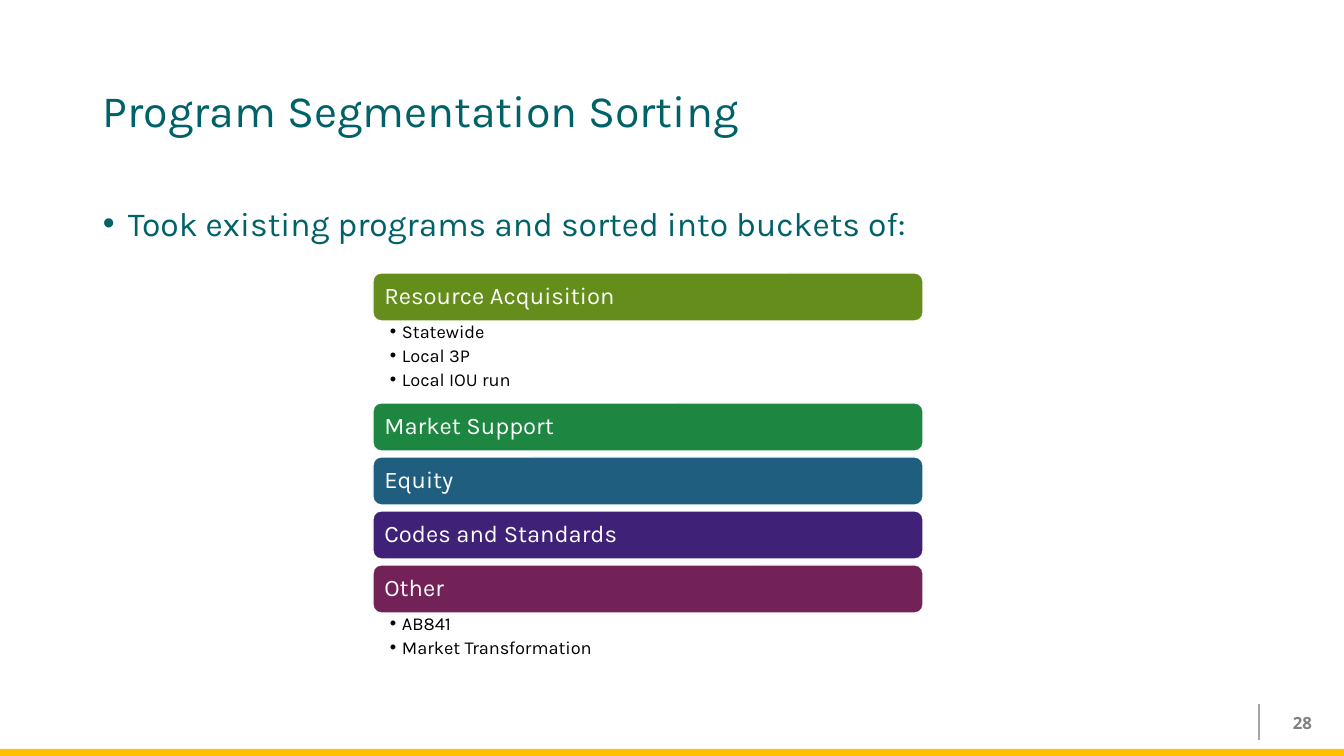
from dataclasses import dataclass

from lxml import etree
from pptx import Presentation
from pptx import util as u
from pptx.dml.color import RGBColor
from pptx.enum import shapes, text
from pptx.oxml.ns import qn

EMU_PER_PX = 914400 / 100.8
TEAL, WHITE, BLACK = "006269", "FFFFFF", "000000"


@dataclass(frozen=True)
class Style:
    size: int
    color: str
    font: str = "Karla"
    bold: bool = False
    align: text.PP_ALIGN = text.PP_ALIGN.LEFT
    anchor: text.MSO_ANCHOR = text.MSO_ANCHOR.TOP
    insets: tuple[int, int, int, int] = (10, 5, 10, 5)
    spacing: float = 0.9
    before: int = 0
    after: int = 0
    indent: int = 0  # hanging bullet indent; 0 means no bullet


@dataclass(frozen=True)
class Bucket:
    name: str
    color: str
    items: tuple[str, ...] = ()
    items_h: int = 0


TITLE = Style(32, TEAL, anchor=text.MSO_ANCHOR.MIDDLE)
BODY = Style(24, TEAL, before=10, indent=25)
NUMBER = Style(12, "808080", "Open Sans", True, text.PP_ALIGN.RIGHT,
               text.MSO_ANCHOR.MIDDLE, spacing=1.0)
BAR = Style(17, WHITE, anchor=text.MSO_ANCHOR.MIDDLE, insets=(9, 9, 9, 9))
ITEM = Style(13, BLACK, insets=(17, 2, 13, 2), after=3, indent=12)

BUCKETS = (
    Bucket("Resource Acquisition", "658D1B",
           ("Statewide", "Local 3P", "Local IOU run"), 82),
    Bucket("Market Support", "1D8641"),
    Bucket("Equity", "1F5E7F"),
    Bucket("Codes and Standards", "3F2178"),
    Bucket("Other", "722257", ("AB841", "Market Transformation"), 53),
)
BAR_X, BAR_Y, BAR_W, BAR_H, BAR_GAP = 373, 273, 550, 48, 6


def px(n: int) -> u.Emu:
    return u.Emu(round(n * EMU_PER_PX))


def rgb(color: str) -> RGBColor:
    return RGBColor.from_string(color)


def write(sp, lines: tuple[str, ...], st: Style) -> None:
    tf = sp.text_frame
    tf.word_wrap = True
    tf.vertical_anchor = st.anchor
    (tf.margin_left, tf.margin_top,
     tf.margin_right, tf.margin_bottom) = map(px, st.insets)
    for i, line in enumerate(lines):
        p = tf.add_paragraph() if i else tf.paragraphs[0]
        p.alignment = st.align
        p.line_spacing = st.spacing
        p.space_before, p.space_after = u.Pt(st.before), u.Pt(st.after)
        if st.indent:
            pPr = p._p.get_or_add_pPr()
            pPr.set("marL", str(px(st.indent)))
            pPr.set("indent", str(-px(st.indent)))
            etree.SubElement(pPr, qn("a:buFont")).set("typeface", "Arial")
            etree.SubElement(pPr, qn("a:buChar")).set("char", "•")
        r = p.add_run()
        r.text = line
        r.font.name, r.font.size, r.font.bold = st.font, u.Pt(st.size), st.bold
        r.font.color.rgb = rgb(st.color)


def add_text(s, x: int, y: int, w: int, h: int,
             lines: tuple[str, ...], st: Style) -> None:
    write(s.shapes.add_textbox(px(x), px(y), px(w), px(h)), lines, st)


def add_box(s, kind: shapes.MSO_SHAPE, x: int, y: int, w: int, h: int,
            fill: str):
    sp = s.shapes.add_shape(kind, px(x), px(y), px(w), px(h))
    sp.shadow.inherit = False
    sp.fill.solid()
    sp.fill.fore_color.rgb = rgb(fill)
    sp.line.fill.background()
    return sp


def add_buckets(s) -> None:
    y = BAR_Y
    for b in BUCKETS:
        sp = add_box(s, shapes.MSO_SHAPE.ROUNDED_RECTANGLE,
                     BAR_X, y, BAR_W, BAR_H, b.color)
        sp.line.color.rgb = rgb(WHITE)
        sp.line.width = u.Pt(1)
        write(sp, (b.name,), BAR)
        y += BAR_H
        if b.items:
            add_text(s, BAR_X, y, BAR_W, b.items_h, b.items, ITEM)
        y += b.items_h or BAR_GAP


def add_footer(s) -> None:
    ln = s.shapes.add_connector(shapes.MSO_CONNECTOR.STRAIGHT,
                                px(1259), px(704), px(1259), px(740))
    ln.line.color.rgb = rgb("A6A6A6")
    ln.line.width = u.Pt(1)
    etree.SubElement(ln._element.spPr, qn("a:effectLst"))
    add_box(s, shapes.MSO_SHAPE.RECTANGLE, 0, 749, 1344, 7, "FFC000")
    add_text(s, 1246, 703, 76, 40, ("28",), NUMBER)


def main() -> None:
    prs = Presentation()
    prs.slide_width, prs.slide_height = px(1344), px(756)
    s = prs.slides.add_slide(prs.slide_layouts[6])

    # Footer rule, band and slide number
    add_footer(s)

    # Title and lead-in
    add_text(s, 93, 40, 1159, 146, ("Program Segmentation Sorting",), TITLE)
    add_text(s, 93, 202, 1159, 60,
             ("Took existing programs and sorted into buckets of:",), BODY)

    # Bucket list
    add_buckets(s)

    prs.save("out.pptx")


if __name__ == "__main__":
    main()
